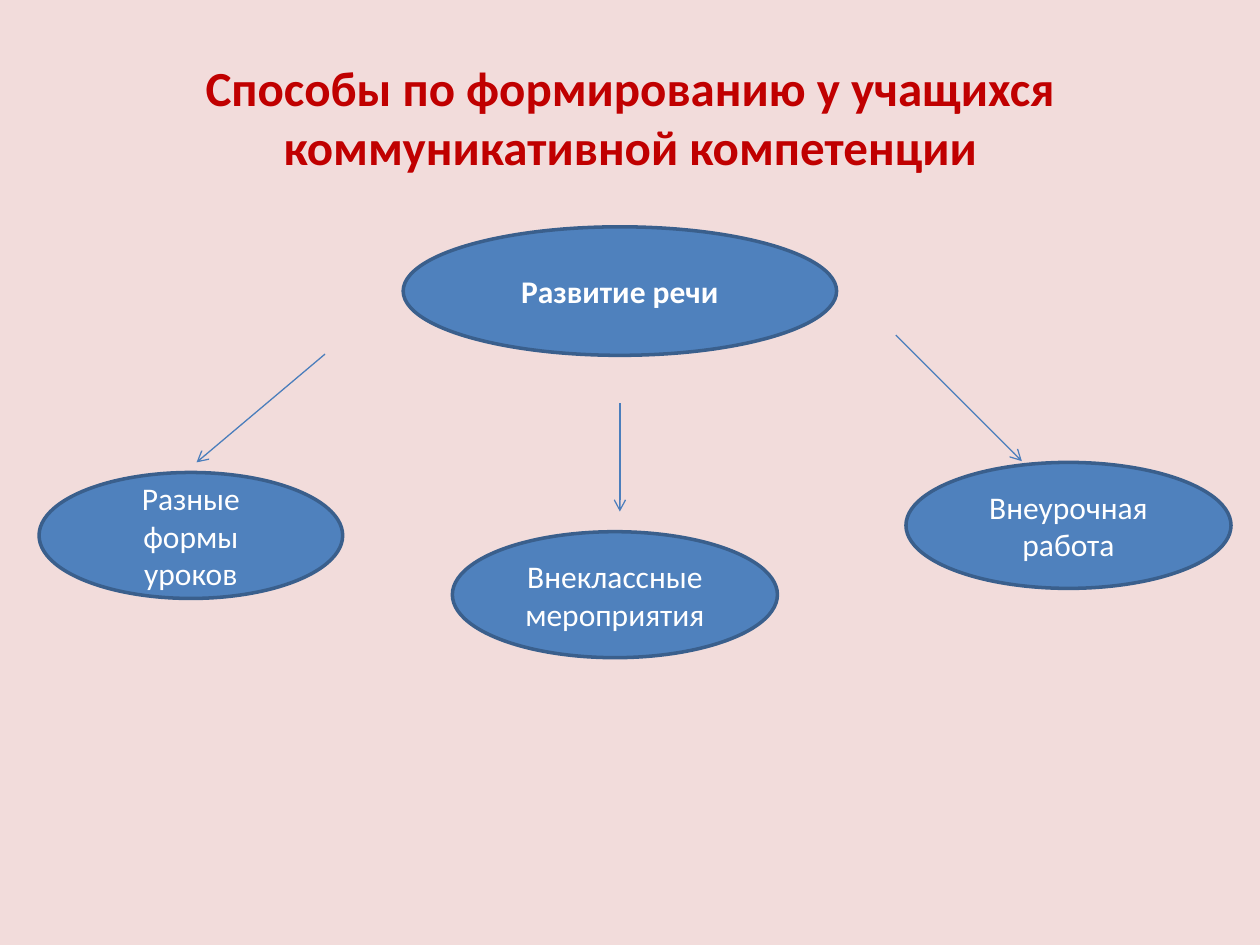
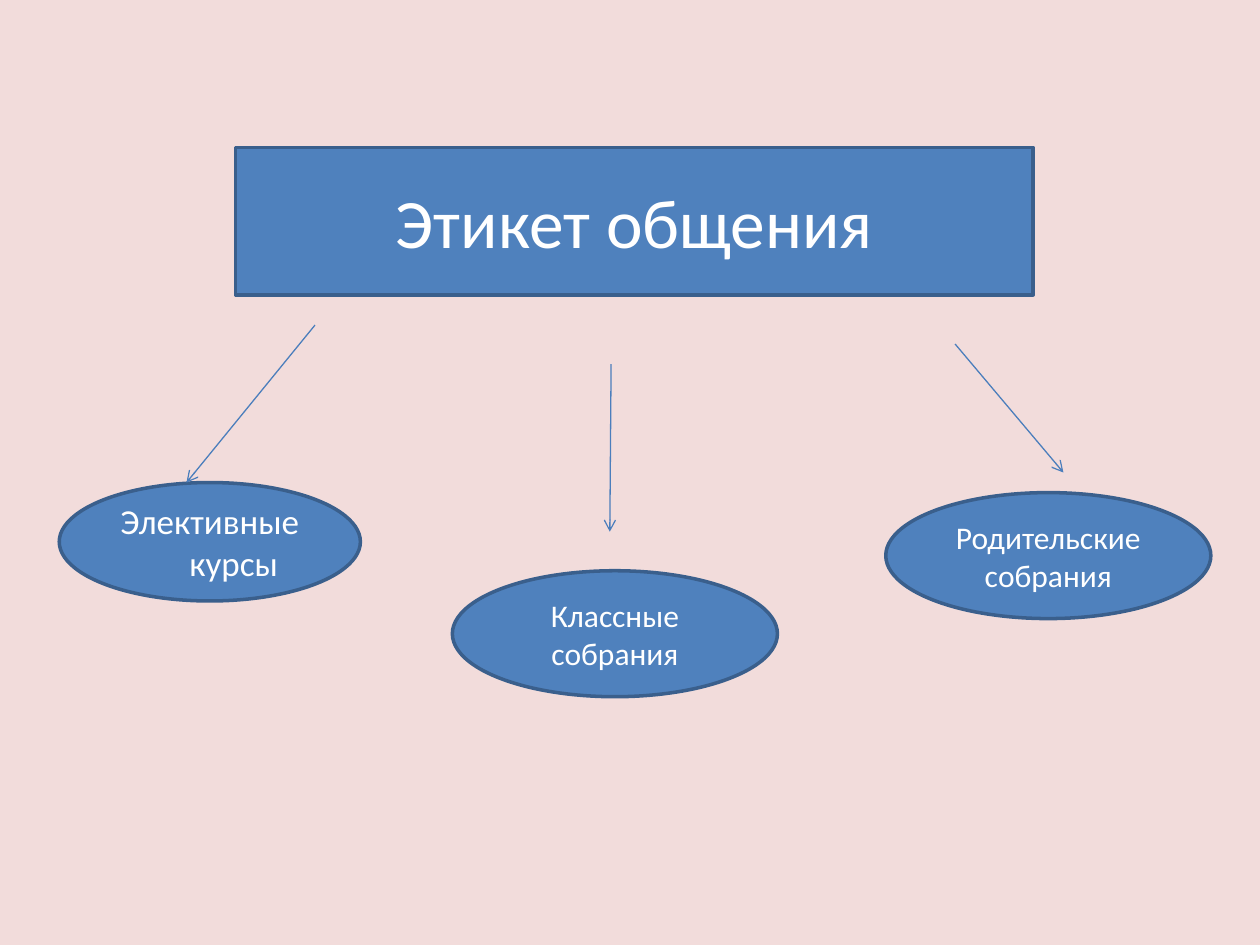
from dataclasses import dataclass

from lxml import etree
from pptx import Presentation
from pptx import util as u
from pptx.dml.color import RGBColor
from pptx.enum import shapes, text
from pptx.oxml.ns import qn


@dataclass(frozen=True)
class Theme:
    font: str = "Calibri"
    background: str = "F2DCDB"
    title: str = "C00000"
    fill: str = "4F81BD"
    outline: str = "3A5F8C"
    arrow: str = "4B7EBC"
    label: str = "FFFFFF"
    title_size: float = 28
    banner_size: float = 39.6
    course_size: float = 20
    label_size: float = 18
    outline_width: float = 2
    arrow_width: float = 0.75


THEME = Theme()
OVAL = shapes.MSO_SHAPE.OVAL
RECTANGLE = shapes.MSO_SHAPE.RECTANGLE
BRANCH_SIZE = (2.58, 1)


def rgb(value):
    return RGBColor.from_string(value)


def add_page(deck):
    page = deck.slides.add_slide(deck.slide_layouts[6])
    page.background.fill.solid()
    page.background.fill.fore_color.rgb = rgb(THEME.background)
    return page


def write(box, words, size, color, bold=False):
    """Put one centred paragraph in a box and return it."""
    frame = box.text_frame
    frame.text = words
    frame.word_wrap = True
    frame.vertical_anchor = text.MSO_ANCHOR.MIDDLE
    para = frame.paragraphs[0]
    para.alignment = text.PP_ALIGN.CENTER
    for span in para.runs:
        span.font.name = THEME.font
        span.font.size = u.Pt(size)
        span.font.bold = bold
        span.font.color.rgb = rgb(color)
    return para


def add_title(page, words):
    box = page.shapes.add_textbox(*map(u.Inches, (0.5, 0.3, 9, 1.25)))
    write(box, words, THEME.title_size, THEME.title, bold=True)


def add_node(page, words, place, size=THEME.label_size, kind=OVAL, bold=False):
    node = page.shapes.add_shape(kind, *map(u.Inches, place))
    node.shadow.inherit = False
    node.fill.solid()
    node.fill.fore_color.rgb = rgb(THEME.fill)
    node.line.color.rgb = rgb(THEME.outline)
    node.line.width = u.Pt(THEME.outline_width)
    return write(node, words, size, THEME.label, bold)


def add_arrow(page, start, end):
    arrow = page.shapes.add_connector(
        shapes.MSO_CONNECTOR.STRAIGHT, *map(u.Inches, start + end))
    arrow.line.color.rgb = rgb(THEME.arrow)
    arrow.line.width = u.Pt(THEME.arrow_width)
    # Open arrowhead, no shadow
    properties = arrow._element.spPr
    etree.SubElement(properties.find(qn("a:ln")), qn("a:tailEnd"), type="arrow")
    etree.SubElement(properties, qn("a:effectLst"))


def hang_indent(para, inches):
    margin = u.Inches(inches)
    properties = para._p.get_or_add_pPr()
    properties.set("marL", str(margin))
    properties.set("indent", str(-margin))


def build_speech(deck):
    page = add_page(deck)
    add_title(page, "Способы по формированию у учащихся коммуникативной компетенции")

    # Topic and its branches
    add_node(page, "Развитие речи", (3.2, 1.8, 3.44, 1.02), bold=True)
    add_node(page, "Разные формы уроков", (0.31, 3.75, 2.41, 1))
    add_node(page, "Внеклассные мероприятия", (3.59, 4.22, *BRANCH_SIZE))
    add_node(page, "Внеурочная работа", (7.19, 3.67, *BRANCH_SIZE))

    # Arrows from the topic
    add_arrow(page, (7.11, 2.66), (8.11, 3.66))
    add_arrow(page, (2.58, 2.81), (1.56, 3.67))
    add_arrow(page, (4.92, 3.2), (4.92, 4.06))


def build_etiquette(deck):
    page = add_page(deck)

    # Topic and its branches
    add_node(page, "Этикет общения", (1.87, 1.17, 6.33, 1.17),
             THEME.banner_size, RECTANGLE)
    courses = add_node(page, "Элективные курсы", (0.47, 3.83, 2.39, 0.94),
                       THEME.course_size)
    hang_indent(courses, 0.38)
    add_node(page, "Классные собрания", (3.59, 4.53, *BRANCH_SIZE))
    add_node(page, "Родительские собрания", (7.03, 3.91, *BRANCH_SIZE))

    # Arrows from the topic
    add_arrow(page, (2.5, 2.58), (1.48, 3.83))
    add_arrow(page, (4.85, 2.89), (4.84, 4.22))
    add_arrow(page, (7.58, 2.73), (8.44, 3.75))


def main():
    deck = Presentation()
    deck.slide_width, deck.slide_height = u.Inches(10), u.Inches(7.5)
    build_speech(deck)
    build_etiquette(deck)
    deck.save("out.pptx")


if __name__ == "__main__":
    main()
